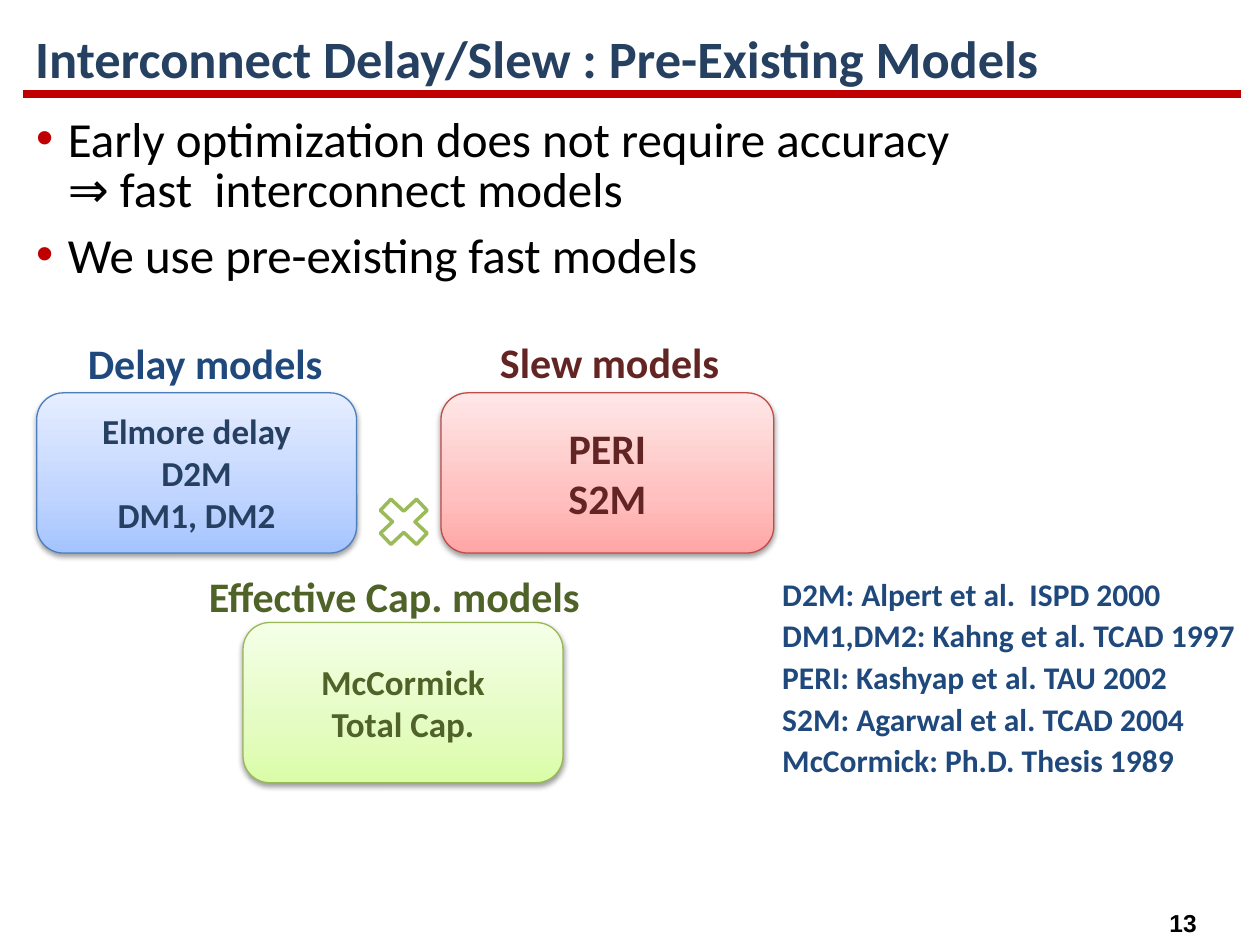
from dataclasses import dataclass

from lxml import etree
from pptx import Presentation
from pptx import util as u
from pptx.dml.color import RGBColor
from pptx.enum import shapes, text
from pptx.oxml.ns import qn


@dataclass(frozen=True)
class Theme:
    font: str = "Calibri"
    number_font: str = "Arial"
    black: str = "000000"
    white: str = "FFFFFF"
    red: str = "C00000"
    navy: str = "254061"
    blue: str = "1F497D"
    maroon: str = "632523"
    olive: str = "4F6228"
    green: str = "9BBB59"
    # Gradient colours run from the bottom edge to the top edge
    blue_fade: tuple = ("A4C4FF", "BFD4FF", "E6EEFF")
    red_fade: tuple = ("FFA6A5", "FFC0BF", "FFE7E7")
    green_fade: tuple = ("DAFDA7", "E4FCC2", "F5FFE7")
    blue_edge: str = "4B7EBC"
    red_edge: str = "BF4C48"
    green_edge: str = "98B955"
    title: int = 30
    body: int = 28
    label: int = 24
    item: int = 20
    reference: int = 18
    number: int = 14


def add_xml(parent, tag, **values):
    child = etree.SubElement(parent, qn(tag))
    for name, value in values.items():
        child.set(name, str(value))
    return child


class SlideBuilder:
    def __init__(self, page, theme):
        self.page = page
        self.theme = theme

    def fill_text(self, box, lines, size, color, bold=True, font=None,
                  align=None, spacing=None, before=0, bullet=None,
                  anchor=text.MSO_ANCHOR.TOP, wrap=True):
        frame = box.text_frame
        frame.word_wrap = wrap
        frame.vertical_anchor = anchor
        for index, line in enumerate(lines):
            para = frame.paragraphs[0] if index == 0 else frame.add_paragraph()
            para.text = line
            if bullet:
                self.add_bullet(para, bullet)
            layout = {"alignment": align, "line_spacing": spacing,
                      "space_before": u.Pt(before if index else 0)}
            for name, value in layout.items():
                setattr(para, name, value)
            for span in para.runs:
                style = {"name": font or self.theme.font,
                         "size": u.Pt(size), "bold": bold}
                for name, value in style.items():
                    setattr(span.font, name, value)
                span.font.color.rgb = RGBColor.from_string(color)

    def add_bullet(self, para, color):
        properties = para._p.get_or_add_pPr()
        indent = u.Cm(0.64)
        properties.set("marL", str(indent))
        properties.set("indent", str(-indent))
        add_xml(add_xml(properties, "a:buClr"), "a:srgbClr", val=color)
        add_xml(properties, "a:buFont", typeface="Arial")
        add_xml(properties, "a:buChar", char="•")

    def text_box(self, place, lines, size, color, **style):
        box = self.page.shapes.add_textbox(*map(u.Cm, place))
        self.fill_text(box, lines, size, color, **style)

    def shape(self, kind, place, edge, width):
        item = self.page.shapes.add_shape(kind, *map(u.Cm, place))
        item.shadow.inherit = False
        item.line.color.rgb = RGBColor.from_string(edge)
        item.line.width = u.Pt(width)
        return item

    def rule(self, left, right, top, color, width):
        line = self.page.shapes.add_connector(
            shapes.MSO_CONNECTOR.STRAIGHT, *map(u.Cm, (left, top, right, top)))
        line.line.color.rgb = RGBColor.from_string(color)
        line.line.width = u.Pt(width)
        add_xml(line._element.spPr, "a:effectLst")

    def cross(self, place, fill, edge):
        item = self.shape(shapes.MSO_SHAPE.MATH_MULTIPLY, place, edge, 2)
        item.fill.solid()
        item.fill.fore_color.rgb = RGBColor.from_string(fill)

    def model_card(self, place, lines, size, color, fade, edge):
        """Rounded card with a three-stop gradient and a soft shadow below."""
        card = self.shape(shapes.MSO_SHAPE.ROUNDED_RECTANGLE, place, edge, 0.75)
        card.fill.gradient()
        card.fill.gradient_angle = 90
        properties = card._element.spPr
        stops = properties.find(".//" + qn("a:gsLst"))
        for stop in list(stops):
            stops.remove(stop)
        for percent, shade in zip((0, 35, 100), fade):
            stop = add_xml(stops, "a:gs", pos=percent * 1000)
            add_xml(stop, "a:srgbClr", val=shade)
        shadow = add_xml(properties.find(qn("a:effectLst")), "a:outerShdw",
                         blurRad=u.Pt(3.1), dist=u.Pt(1.6), dir=90 * 60000,
                         rotWithShape=0)
        shadow_color = add_xml(shadow, "a:srgbClr", val=self.theme.black)
        add_xml(shadow_color, "a:alpha", val=38000)
        self.fill_text(card, lines, size, color, wrap=False,
                       align=text.PP_ALIGN.CENTER,
                       anchor=text.MSO_ANCHOR.MIDDLE)


def main():
    deck = Presentation()
    deck.slide_width, deck.slide_height = u.Cm(25.4), u.Cm(19.05)
    theme = Theme()
    builder = SlideBuilder(deck.slides.add_slide(deck.slide_layouts[6]), theme)

    builder.rule(0.46, 25.02, 1.9, theme.red, 4.5)
    builder.text_box((23.29, 18.19, 1.12, 0.86), ["13"], theme.number,
                     theme.black, font=theme.number_font, wrap=False,
                     align=text.PP_ALIGN.CENTER)
    builder.text_box((0.46, 0.41, 24.59, 1.65),
                     ["Interconnect Delay/Slew : Pre-Existing Models"],
                     theme.title, theme.navy, spacing=0.9,
                     anchor=text.MSO_ANCHOR.MIDDLE)
    builder.text_box((0.48, 2.24, 24.54, 14.91),
                     ["Early optimization does not require accuracy"
                      "\v⇒ fast  interconnect models",
                      "We use pre-existing fast models"],
                     theme.body, theme.black, bold=False, spacing=0.85,
                     before=9, bullet=theme.red)

    cards = [
        ((0.74, 7.92, 6.45, 3.23), ["Elmore delay", "D2M", "DM1, DM2"],
         theme.item, theme.navy, theme.blue_fade, theme.blue_edge),
        ((8.89, 7.92, 6.71, 3.23), ["PERI", "S2M"],
         theme.label, theme.maroon, theme.red_fade, theme.red_edge),
        ((4.9, 12.55, 6.45, 3.23), ["McCormick", "Total Cap."],
         theme.item, theme.olive, theme.green_fade, theme.green_edge),
    ]
    for card in cards:
        builder.model_card(*card)

    labels = [
        ((1.52, 6.68, 5.28, 1.27), "Delay models", theme.blue),
        ((9.83, 6.65, 4.98, 1.27), "Slew models", theme.maroon),
        ((3.96, 11.38, 8.1, 1.27), "Effective Cap. models", theme.olive),
    ]
    for place, label, color in labels:
        builder.text_box(place, [label], theme.label, color, wrap=False)

    builder.cross((7.44, 9.86, 1.4, 1.32), theme.white, theme.green)
    builder.text_box((15.52, 11.58, 9.75, 4.11),
                     ["D2M: Alpert et al.  ISPD 2000",
                      "DM1,DM2: Kahng et al. TCAD 1997",
                      "PERI: Kashyap et al. TAU 2002",
                      "S2M: Agarwal et al. TCAD 2004",
                      "McCormick: Ph.D. Thesis 1989"],
                     theme.reference, theme.blue, spacing=0.85, before=5.4)

    deck.save("out.pptx")


if __name__ == "__main__":
    main()
